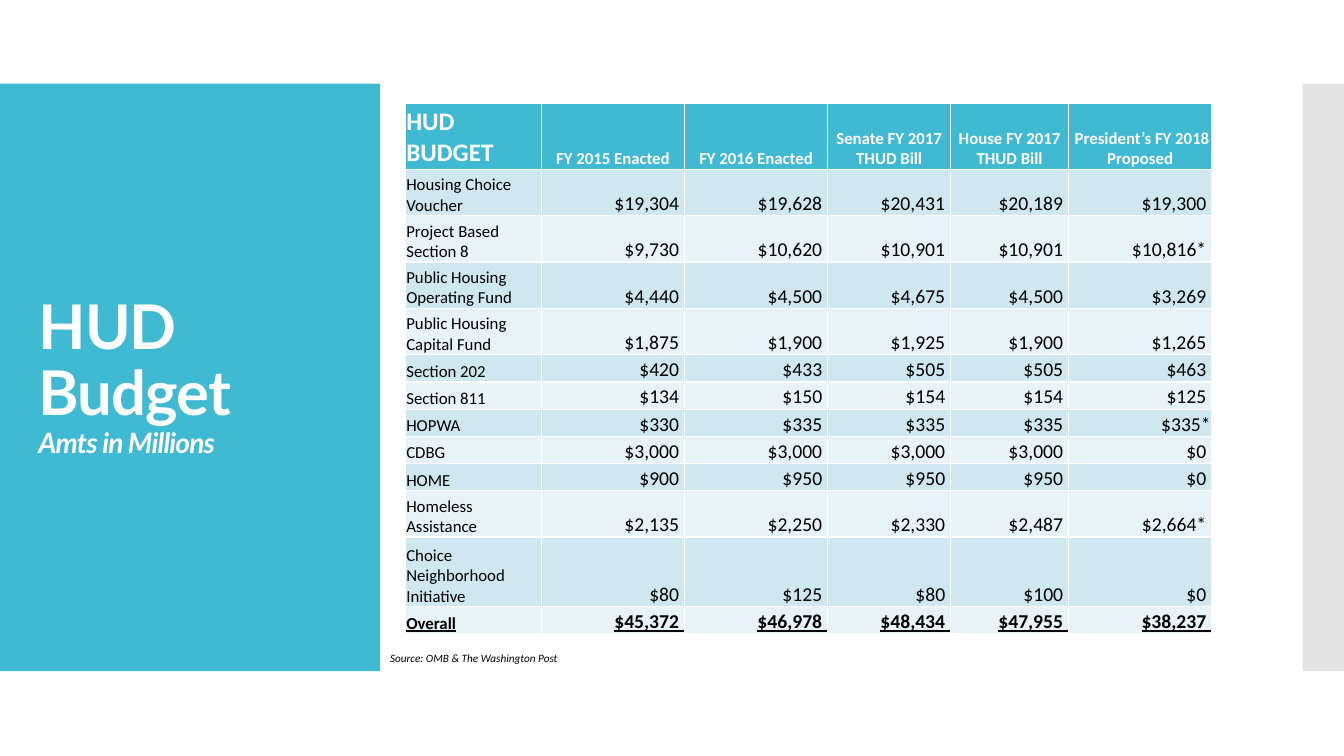
from lxml import etree
from pptx import Presentation
from pptx.dml.color import RGBColor
from pptx.enum import shapes, text
from pptx.oxml import ns
from pptx.util import Inches, Pt

TEAL = RGBColor(0x40, 0xBA, 0xD2)
GREY = RGBColor(0xC8, 0xC8, 0xC8)
BANDS = RGBColor(0xCF, 0xE7, 0xEE), RGBColor(0xE8, 0xF3, 0xF7)
WHITE = RGBColor(0xFF, 0xFF, 0xFF)
BLACK = RGBColor(0, 0, 0)

HEADING = "HUD Budget"
UNITS = "Amts in Millions"
SOURCE = "Source: OMB & The Washington Post"
COLUMNS = [
    ("HUD BUDGET", 1.35),
    ("FY 2015 Enacted", 1.42),
    ("FY 2016 Enacted", 1.42),
    ("Senate FY 2017 THUD Bill", 1.22),
    ("House FY 2017 THUD Bill", 1.17),
    (" President’s FY 2018 Proposed", 1.42),
]
PROGRAMS = [
    ("Housing Choice Voucher", "$19,304 ", "$19,628 ", "$20,431 ", "$20,189 ", "$19,300 "),
    ("Project Based Section 8", "$9,730 ", "$10,620 ", "$10,901 ", "$10,901 ", " $10,816* "),
    ("Public Housing Operating Fund", "$4,440 ", "$4,500 ", "$4,675 ", "$4,500 ", "$3,269 "),
    ("Public Housing Capital Fund", "$1,875 ", "$1,900 ", "$1,925 ", "$1,900 ", "$1,265 "),
    ("Section 202", "$420 ", "$433 ", "$505 ", "$505 ", "$463 "),
    ("Section 811", "$134 ", "$150 ", "$154 ", "$154 ", "$125 "),
    ("HOPWA", "$330 ", "$335 ", "$335 ", "$335 ", " $335*"),
    ("CDBG", "$3,000 ", "$3,000 ", "$3,000 ", "$3,000 ", "$0 "),
    ("HOME", "$900 ", "$950 ", "$950 ", "$950 ", "$0 "),
    ("Homeless Assistance", "$2,135 ", "$2,250 ", "$2,330 ", "$2,487 ", " $2,664* "),
    ("Choice Neighborhood Initiative", "$80 ", "$125 ", "$80 ", "$100 ", "$0 "),
    ("Overall", "$45,372 ", "$46,978 ", "$48,434 ", "$47,955 ", "$38,237 "),
]
ROW_HEIGHTS = [0.65] + [0.46] * 4 + [0.27] * 5 + [0.46, 0.69, 0.27]


def add_panel(slide, left, width, color):
    """Add a full-height colour panel behind the title."""
    panel = slide.shapes.add_shape(shapes.MSO_SHAPE.RECTANGLE, Inches(left), Inches(0.83),
                                   Inches(width), Inches(5.83))
    panel.shadow.inherit = False
    panel.fill.solid()
    panel.fill.fore_color.rgb = color
    panel.line.fill.background()
    slide.shapes.title.element.addprevious(panel.element)
    return panel


def add_heading(slide):
    """Fill the title placeholder with the heading and its units."""
    title = slide.shapes.title
    title.left, title.top = Inches(0.28), Inches(1.23)
    title.width, title.height = Inches(3.22), Inches(5.03)
    frame = title.text_frame
    frame.word_wrap = True
    frame.auto_size = text.MSO_AUTO_SIZE.NONE
    frame.vertical_anchor = text.MSO_ANCHOR.MIDDLE
    paragraph = frame.paragraphs[0]
    paragraph.alignment = text.PP_ALIGN.LEFT
    paragraph.line_spacing = 0.9
    heading = paragraph.add_run()
    paragraph.add_line_break()
    units = paragraph.add_run()
    for run, words, size in ((heading, HEADING, 44), (units, UNITS, 20)):
        run.text = words
        run.font.name = "Lato"
        run.font.size = Pt(size)
        run.font.bold = True
        run.font.color.rgb = WHITE
        run.font._element.set("spc", "-60")
    units.font.italic = True


def add_budget(slide):
    """Build the budget table with its header, bands and total row."""
    rows = [[name for name, _ in COLUMNS]] + PROGRAMS
    budget = slide.shapes.add_table(len(rows), len(COLUMNS), Inches(4.02), Inches(1.03),
                                    Inches(8), Inches(sum(ROW_HEIGHTS))).table
    for column, (_, width) in zip(budget.columns, COLUMNS):
        column.width = Inches(width)
    for r, (row, height) in enumerate(zip(rows, ROW_HEIGHTS)):
        budget.rows[r].height = Inches(height)
        header, total = r == 0, r == len(rows) - 1
        for c, words in enumerate(row):
            cell = budget.cell(r, c)
            cell.margin_left = cell.margin_right = cell.margin_top = Inches(0.01)
            cell.margin_bottom = 0
            corner = header and c == 0
            cell.vertical_anchor = text.MSO_ANCHOR.MIDDLE if corner else text.MSO_ANCHOR.BOTTOM
            cell.fill.solid()
            cell.fill.fore_color.rgb = TEAL if header else BANDS[(r - 1) % 2]
            cell.text = words
            paragraph = cell.text_frame.paragraphs[0]
            if c:
                paragraph.alignment = text.PP_ALIGN.CENTER if header else text.PP_ALIGN.RIGHT
            font = paragraph.font
            font.name = "Calibri"
            font.size = Pt(18 if corner else 12 if header or c == 0 else 14)
            font.bold = header or total
            font.underline = total
            font.color.rgb = WHITE if header else BLACK


def add_source(slide):
    """Add the source line under the table."""
    source = slide.shapes.add_textbox(Inches(3.77), Inches(6.41), Inches(1.87), Inches(0.24))
    frame = source.text_frame
    frame.word_wrap = False
    frame.auto_size = text.MSO_AUTO_SIZE.SHAPE_TO_FIT_TEXT
    frame.text = SOURCE
    font = frame.paragraphs[0].font
    font.name = "Calibri"
    font.size = Pt(8)
    font.italic = True
    font.color.rgb = BLACK


def main():
    """Build and save the HUD budget slide."""
    deck = Presentation()
    deck.slide_width, deck.slide_height = Inches(13.33), Inches(7.5)
    slide = deck.slides.add_slide(deck.slide_layouts[5])
    add_panel(slide, 0, 3.77, TEAL)
    edge = add_panel(slide, 12.92, 0.41, GREY)
    edge_color = edge.element.spPr.find(ns.qn("a:solidFill")).find(ns.qn("a:srgbClr"))
    etree.SubElement(edge_color, ns.qn("a:alpha"), val="50000")
    add_heading(slide)
    add_source(slide)
    add_budget(slide)
    deck.save("out.pptx")


if __name__ == "__main__":
    main()
